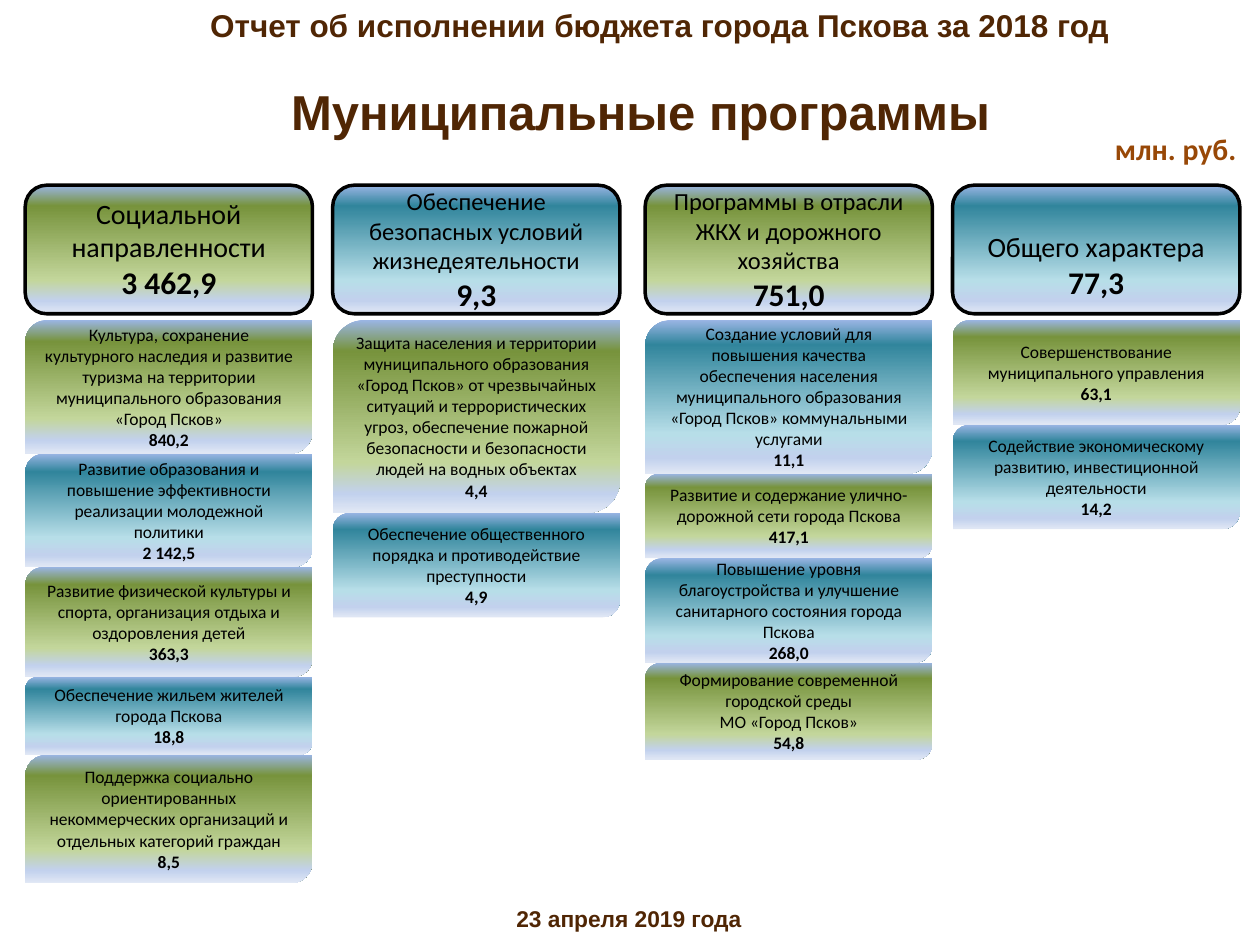
"""Build the slide on Pskov's municipal programmes in the 2018 budget report."""
import pptx
import pptx.dml.color
import pptx.enum.shapes
import pptx.enum.text
import pptx.oxml.ns
import pptx.util
from lxml import etree

Inches = pptx.util.Inches
Shape = pptx.enum.shapes.MSO_SHAPE
Align = pptx.enum.text.PP_ALIGN
Anchor = pptx.enum.text.MSO_ANCHOR
qn = pptx.oxml.ns.qn

COLORS = {"brown": "502604", "orange": "984807", "black": "000000"}
GRADIENTS = {
    "green": {0: "9AB5E4", 16: "77933C", 74: "C3D69B", 90: "C2D1ED", 100: "E1E8F5"},
    "teal": {0: "9AB5E4", 16: "31859C", 74: "B7DEE8", 90: "C2D1ED", 100: "E1E8F5"},
}
COLUMN_WIDTH, HEADER_TOP, HEADER_HEIGHT, CARDS_TOP = 2.28, 1.47, 1.02, 2.54

COLUMNS = [
    (0.2, "green", 16, Anchor.BOTTOM, "Социальной направленности", "3 462,9", "green", [
        (1.06, "Культура, сохранение культурного наследия и развитие туризма на территории "
               "муниципального образования «Город Псков»", "840,2"),
        (0.9, "Развитие образования и повышение эффективности реализации молодежной политики",
         "2 142,5"),
        (0.87, "Развитие физической культуры и спорта, организация отдыха и оздоровления детей",
         "363,3"),
        (0.62, "Обеспечение жильем жителей города Пскова", "18,8"),
        (1.02, "Поддержка социально ориентированных некоммерческих организаций и отдельных "
               "категорий граждан", "8,5"),
    ]),
    (2.64, "teal", 14, Anchor.MIDDLE, "Обеспечение безопасных условий жизнедеятельности", "9,3",
     "green", [
        (1.53, "Защита населения и территории муниципального образования «Город Псков» от "
               "чрезвычайных ситуаций и террористических угроз, обеспечение пожарной "
               "безопасности и безопасности людей на водных объектах", "4,4"),
        (0.83, "Обеспечение общественного порядка и противодействие преступности", "4,9"),
    ]),
    (5.12, "green", 14, Anchor.MIDDLE, "Программы в отрасли ЖКХ и дорожного хозяйства", "751,0",
     "teal", [
        (1.22, "Создание условий для повышения качества обеспечения населения муниципального "
               "образования «Город Псков» коммунальными услугами", "11,1"),
        (0.67, "Развитие и содержание улично-дорожной сети города Пскова", "417,1"),
        (0.83, "Повышение уровня благоустройства и улучшение санитарного состояния города Пскова",
         "268,0"),
        (0.77, "Формирование современной городской среды\nМО «Город Псков»", "54,8"),
    ]),
    (7.56, "teal", 16, Anchor.BOTTOM, "Общего характера", "77,3", "green", [
        (0.83, "Совершенствование муниципального управления", "63,1"),
        (0.83, "Содействие экономическому развитию, инвестиционной деятельности", "14,2"),
    ]),
]


def write(para, text, size, color, bold, font="Calibri", align=Align.CENTER):
    para.text = text
    para.alignment = align
    para.font.name = font
    para.font.size = pptx.util.Pt(size)
    para.font.bold = bold
    para.font.color.rgb = pptx.dml.color.RGBColor.from_string(COLORS[color])


def add_block(kind, left, top, height, gradient, anchor, label, label_size, amount, amount_size):
    box = page.shapes.add_shape(
        kind, Inches(left), Inches(top), Inches(COLUMN_WIDTH), Inches(height))
    box.shadow.inherit = False
    box.line.fill.background()
    box.fill.gradient()
    box.fill.gradient_angle = 270
    stops = box.element.spPr.find(qn("a:gradFill")).find(qn("a:gsLst"))
    stops.clear()
    for position, color in GRADIENTS[gradient].items():
        stop = etree.SubElement(stops, qn("a:gs"), pos=str(position * 1000))
        etree.SubElement(stop, qn("a:srgbClr"), val=color)
    frame = box.text_frame
    frame.word_wrap = True
    frame.vertical_anchor = anchor
    write(frame.paragraphs[0], label, label_size, "black", False)
    write(frame.add_paragraph(), amount, amount_size, "black", True)
    return box


deck = pptx.Presentation()
deck.slide_width, deck.slide_height = Inches(10), Inches(7.5)
page = deck.slides.add_slide(deck.slide_layouts[5])

title = page.shapes.title
title.left, title.top, title.width, title.height = map(Inches, (2.18, 0.6, 5.81, 0.57))
title.text_frame.auto_size = pptx.enum.text.MSO_AUTO_SIZE.NONE
title.text_frame.word_wrap = False
title.text_frame.vertical_anchor = Anchor.TOP
write(title.text_frame.paragraphs[0], "Муниципальные программы", 28, "brown", True, "Arial")

CAPTIONS = [
    ("Отчет об исполнении бюджета города Пскова за 2018 год",
     (0, 0, 10, 0.4), 18, "brown", "Arial", Align.LEFT, 1.57, True),
    ("23 апреля 2019 года", (-0.01, 7.13, 10, 0.32), 13, "brown", "Arial", Align.CENTER, 0, True),
    ("млн. руб.", (8.75, 0.99, 1.17, 0.39), 17, "orange", "Calibri", Align.LEFT, 0, False),
]
for text, place, size, color, font, align, indent, wrap in CAPTIONS:
    caption = page.shapes.add_textbox(*map(Inches, place))
    caption.text_frame.word_wrap = wrap
    para = caption.text_frame.paragraphs[0]
    if indent:
        para._p.get_or_add_pPr().set("marL", str(Inches(indent)))
    write(para, text, size, color, True, font, align)

for left, gradient, size, anchor, heading, total, first, cards in COLUMNS:
    header = add_block(Shape.ROUNDED_RECTANGLE, left, HEADER_TOP, HEADER_HEIGHT, gradient,
                       anchor, heading, size, total, 18)
    header.line.color.rgb = pptx.dml.color.RGBColor.from_string(COLORS["black"])
    header.line.width = pptx.util.Pt(2)
    top, shade = CARDS_TOP, first
    for height, programme, amount in cards:
        add_block(Shape.ROUND_2_DIAG_RECTANGLE, left, top, height, shade, Anchor.MIDDLE,
                  programme, 10, amount, 10)
        top += height
        shade = "teal" if shade == "green" else "green"

deck.save("out.pptx")
